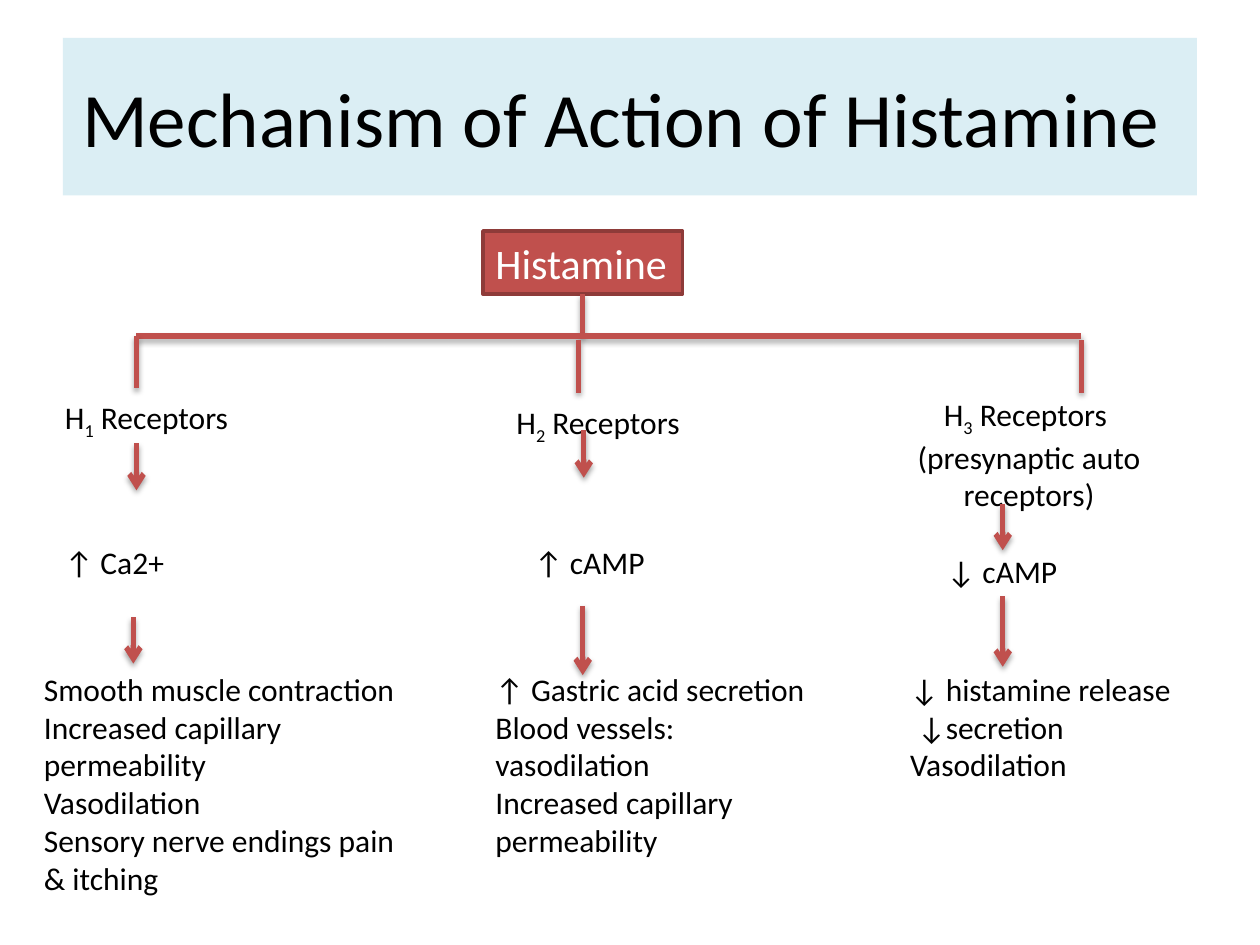
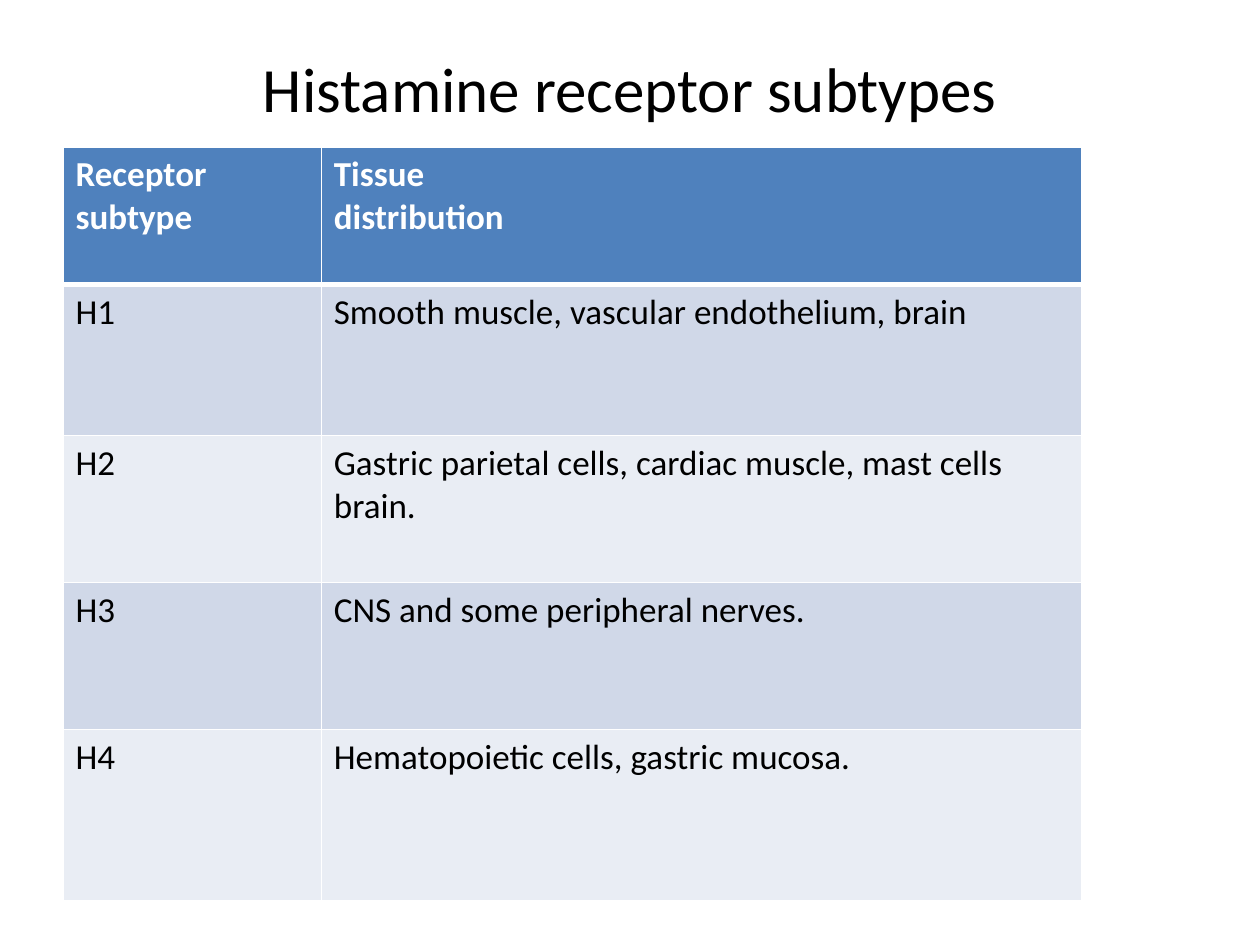
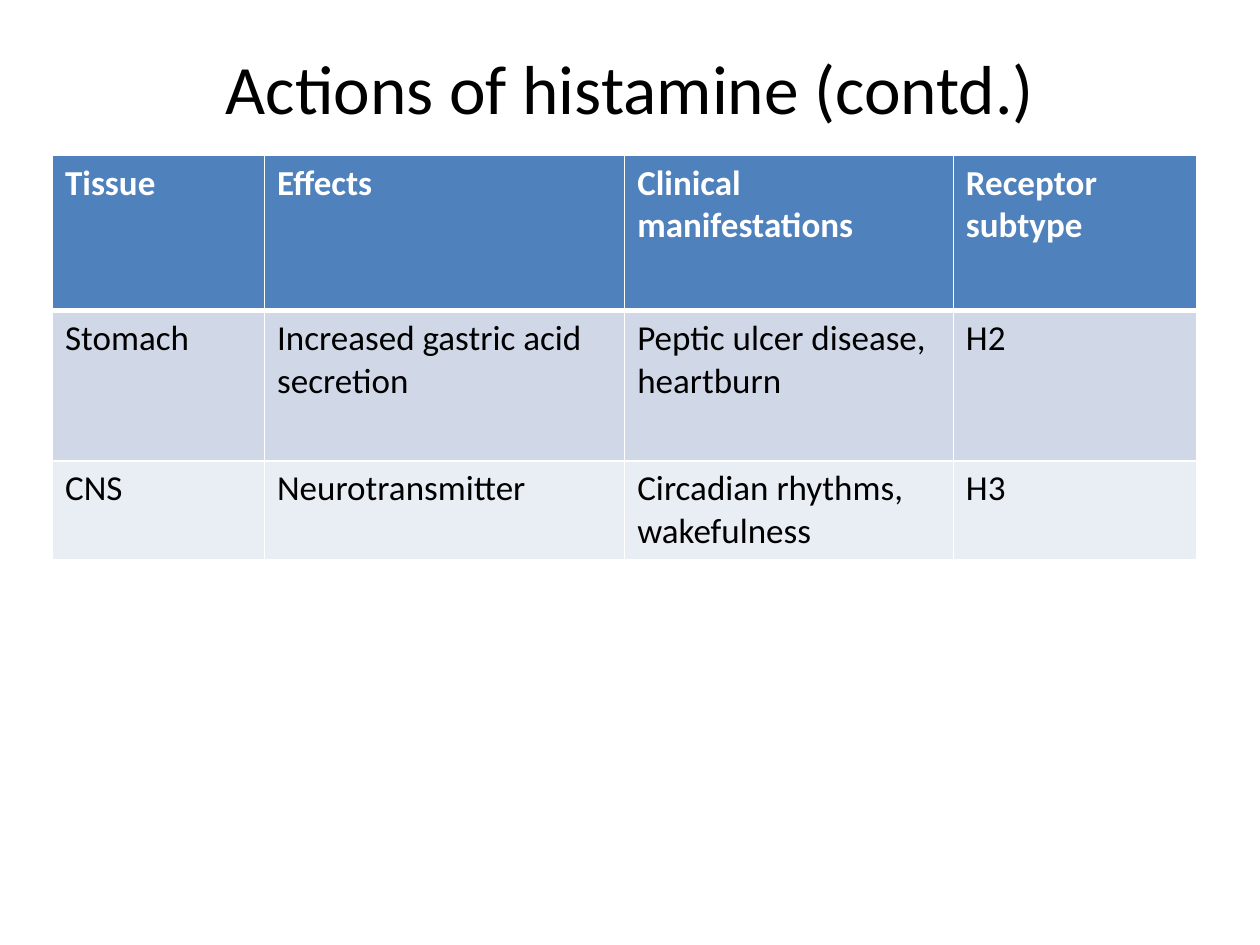
from dataclasses import dataclass
from typing import NamedTuple, Optional

from lxml.etree import SubElement
from pptx import Presentation
from pptx.dml.color import RGBColor as Rgb
from pptx.enum.shapes import MSO_CONNECTOR as Connector, MSO_SHAPE as Preset
from pptx.enum.text import MSO_ANCHOR as Anchor, MSO_AUTO_SIZE as AutoSize, PP_ALIGN as Align
from pptx.oxml.ns import qn
from pptx.slide import Slide
from pptx.util import Emu, Inches, Pt

WIDTH, HEIGHT = Inches(10), Inches(7.5)
COLUMNS, ROWS = 120, 90


@dataclass(frozen=True)
class Theme:
    font: str = "Calibri"
    ink: str = "000000"
    white: str = "FFFFFF"
    title_band: str = "DBEEF4"
    accent: str = "C0504D"
    accent_edge: str = "8E3B39"
    header: str = "4F81BD"
    bands: tuple[str, str] = ("D0D8E8", "E9EDF4")
    body_size: float = 18
    table_size: float = 20
    root_size: float = 24
    edge_width: float = 2
    line_width: float = 3
    border_width: float = 1
    header_rule_width: float = 3


THEME = Theme()


class Area(NamedTuple):
    column: float
    row: float
    columns: float
    rows: float


class Drop(NamedTuple):
    column: float
    top: float
    bottom: float


@dataclass(frozen=True)
class Block:
    area: Area
    lines: tuple[str, ...]
    size: float = THEME.body_size
    color: str = THEME.ink
    align: Align = Align.LEFT
    anchor: Anchor = Anchor.TOP
    fill: Optional[str] = None
    edge: Optional[str] = None
    grow: bool = True


@dataclass(frozen=True)
class Pathway:
    branch: Drop
    receptor: Block
    messenger: Block
    effects: Block
    arrows: tuple[Drop, Drop]


@dataclass(frozen=True)
class Grid:
    column: float
    row: float
    widths: tuple[float, ...]
    heights: tuple[float, ...]
    entries: tuple[tuple[str, ...], ...]


PATHWAYS = (
    Pathway(
        Drop(13, 32, 37),
        Block(Area(5, 37.3, 20, 4.8), ("H|1| Receptors",)),
        Block(Area(5, 51.1, 20, 4.8), ("↑ Ca2+",)),
        Block(Area(3, 63.2, 38, 23), (
            "Smooth muscle contraction", "Increased capillary permeability",
            "Vasodilation", "Sensory nerve endings pain & itching")),
        (Drop(13, 42.2, 46.7), Drop(12.7, 58.8, 63.2)),
    ),
    Pathway(
        Drop(55.1, 32.4, 37.4),
        Block(Area(48, 37.8, 20, 4.8), ("H|2| Receptors",)),
        Block(Area(49.7, 51.1, 20, 4.8), ("↑ cAMP",)),
        Block(Area(46, 63.2, 33, 19.4), (
            "↑ Gastric acid secretion", "Blood vessels: vasodilation",
            "Increased capillary permeability")),
        (Drop(55.6, 41, 45.5), Drop(55.5, 57.7, 64.3)),
    ),
    Pathway(
        Drop(103, 32.4, 37.4),
        Block(Area(82, 37, 32, 12.1), ("H|3| Receptors ", "(presynaptic auto receptors)"),
              align=Align.CENTER),
        Block(Area(89, 52, 20, 4.8), ("↓ cAMP",)),
        Block(Area(85.5, 63.2, 33, 15.7), (
            "↓ histamine release", " ↓secretion", "Vasodilation")),
        (Drop(95.5, 48, 52.4), Drop(95.5, 56.8, 63.5)),
    ),
)

SUBTYPES = Grid(6, 14, (24.6, 72.4), (13.1, 14.4, 14, 14, 16.3), (
    ("Receptor\nsubtype", "Tissue\ndistribution"),
    ("H1", "Smooth muscle, vascular endothelium, brain"),
    ("H2", "Gastric parietal cells, cardiac muscle, mast cells brain."),
    ("H3", "CNS and some peripheral nerves."),
    ("H4", "Hematopoietic cells, gastric mucosa."),
))

ACTIONS = Grid(5, 14.8, (20.2, 34.3, 31.3, 23.2), (14.8, 14.3, 9), (
    ("Tissue", "Effects", "Clinical\nmanifestations", "Receptor\nsubtype"),
    ("Stomach", "Increased gastric acid secretion", "Peptic ulcer disease, heartburn", "H2"),
    ("CNS", "Neurotransmitter", "Circadian rhythms, wakefulness", "H3"),
))


def across(columns: float) -> Emu:
    return Emu(round(columns * WIDTH / COLUMNS))


def down(rows: float) -> Emu:
    return Emu(round(rows * HEIGHT / ROWS))


def style_run(run, size: float, color: str, bold: bool = False) -> None:
    run.font.name = THEME.font
    run.font.size = Pt(size)
    run.font.bold = bold
    run.font.color.rgb = Rgb.from_string(color)


def draw_block(slide: Slide, block: Block):
    area = block.area
    place = (across(area.column), down(area.row), across(area.columns), down(area.rows))
    if block.fill:
        panel = slide.shapes.add_shape(Preset.RECTANGLE, *place)
        panel.shadow.inherit = False
        panel.fill.solid()
        panel.fill.fore_color.rgb = Rgb.from_string(block.fill)
        if block.edge:
            panel.line.color.rgb = Rgb.from_string(block.edge)
            panel.line.width = Pt(THEME.edge_width)
        else:
            panel.line.fill.background()
    else:
        panel = slide.shapes.add_textbox(*place)
    frame = panel.text_frame
    frame.word_wrap = True
    frame.auto_size = AutoSize.SHAPE_TO_FIT_TEXT if block.grow else AutoSize.NONE
    frame.vertical_anchor = block.anchor
    for index, line in enumerate(block.lines):
        paragraph = frame.add_paragraph() if index else frame.paragraphs[0]
        paragraph.alignment = block.align
        for order, part in enumerate(line.split("|")):
            run = paragraph.add_run()
            run.text = part
            style_run(run, block.size, block.color)
            if order % 2:
                run.font._element.set("baseline", "-25000")
    return panel


def draw_title(slide: Slide, title: str, size: float, rows: float = 9.4,
               fill: Optional[str] = None) -> None:
    draw_block(slide, Block(Area(6, 3.6, 108, rows), (title,), size, align=Align.CENTER,
                            anchor=Anchor.MIDDLE, fill=fill, grow=False))


def draw_line(slide: Slide, start: tuple[float, float], end: tuple[float, float],
              arrow: bool = False):
    line = slide.shapes.add_connector(Connector.STRAIGHT, across(start[0]), down(start[1]),
                                      across(end[0]), down(end[1]))
    line.line.color.rgb = Rgb.from_string(THEME.accent)
    line.line.width = Pt(THEME.line_width)
    properties = line._element.spPr
    if arrow:
        SubElement(properties.find(qn("a:ln")), qn("a:tailEnd"), type="arrow")
    effects = SubElement(properties, qn("a:effectLst"))
    shadow = SubElement(effects, qn("a:outerShdw"), blurRad=str(Pt(3.1)), dist=str(Pt(1.8)),
                        dir="5400000", rotWithShape="0")
    tint = SubElement(shadow, qn("a:srgbClr"), val=THEME.ink)
    SubElement(tint, qn("a:alpha"), val="35000")
    return line


def draw_drop(slide: Slide, drop: Drop, arrow: bool = False):
    return draw_line(slide, (drop.column, drop.top), (drop.column, drop.bottom), arrow)


def draw_borders(cell, top: float, bottom: float) -> None:
    widths = {"L": THEME.border_width, "R": THEME.border_width, "T": top, "B": bottom}
    for side, width in widths.items():
        border = SubElement(cell._tc.get_or_add_tcPr(), qn(f"a:ln{side}"), w=str(Pt(width)))
        SubElement(SubElement(border, qn("a:solidFill")), qn("a:srgbClr"), val=THEME.white)


def draw_grid(slide: Slide, grid: Grid) -> None:
    table = slide.shapes.add_table(
        len(grid.heights), len(grid.widths), across(grid.column), down(grid.row),
        across(sum(grid.widths)), down(sum(grid.heights))).table
    for column, width in zip(table.columns, grid.widths):
        column.width = across(width)
    for index, (row, height, entries) in enumerate(zip(table.rows, grid.heights, grid.entries)):
        row.height = down(height)
        heading = index == 0
        fill = THEME.header if heading else THEME.bands[(index - 1) % 2]
        top = THEME.header_rule_width if index == 1 else THEME.border_width
        bottom = THEME.header_rule_width if heading else THEME.border_width
        for cell, entry in zip(row.cells, entries):
            draw_borders(cell, top, bottom)
            cell.fill.solid()
            cell.fill.fore_color.rgb = Rgb.from_string(fill)
            cell.text_frame.text = entry
            for paragraph in cell.text_frame.paragraphs:
                for run in paragraph.runs:
                    style_run(run, THEME.table_size, THEME.white if heading else THEME.ink, heading)


def build_mechanism(slide: Slide) -> None:
    draw_title(slide, "Mechanism of Action of Histamine ", 44, 15, THEME.title_band)
    histamine = draw_block(slide, Block(
        Area(46, 22, 19, 6), ("Histamine",), THEME.root_size, THEME.white,
        fill=THEME.accent, edge=THEME.accent_edge))
    stem = draw_drop(slide, Drop(55.5, 28, 32))
    stem.begin_connect(histamine, 2)
    draw_line(slide, (PATHWAYS[0].branch.column, 32), (PATHWAYS[-1].branch.column, 32))
    for pathway in PATHWAYS:
        draw_drop(slide, pathway.branch)
        for block in (pathway.receptor, pathway.messenger, pathway.effects):
            draw_block(slide, block)
        for arrow in pathway.arrows:
            draw_drop(slide, arrow, arrow=True)


def build_table(slide: Slide, title: str, size: float, grid: Grid) -> None:
    draw_title(slide, title, size)
    draw_grid(slide, grid)


def main() -> None:
    deck = Presentation()
    deck.slide_width, deck.slide_height = WIDTH, HEIGHT
    blank = deck.slide_layouts[6]
    build_mechanism(deck.slides.add_slide(blank))
    build_table(deck.slides.add_slide(blank), "Histamine receptor subtypes", 36, SUBTYPES)
    build_table(deck.slides.add_slide(blank), "Actions of histamine (contd.)", 39.6, ACTIONS)
    deck.save("out.pptx")


if __name__ == "__main__":
    main()
